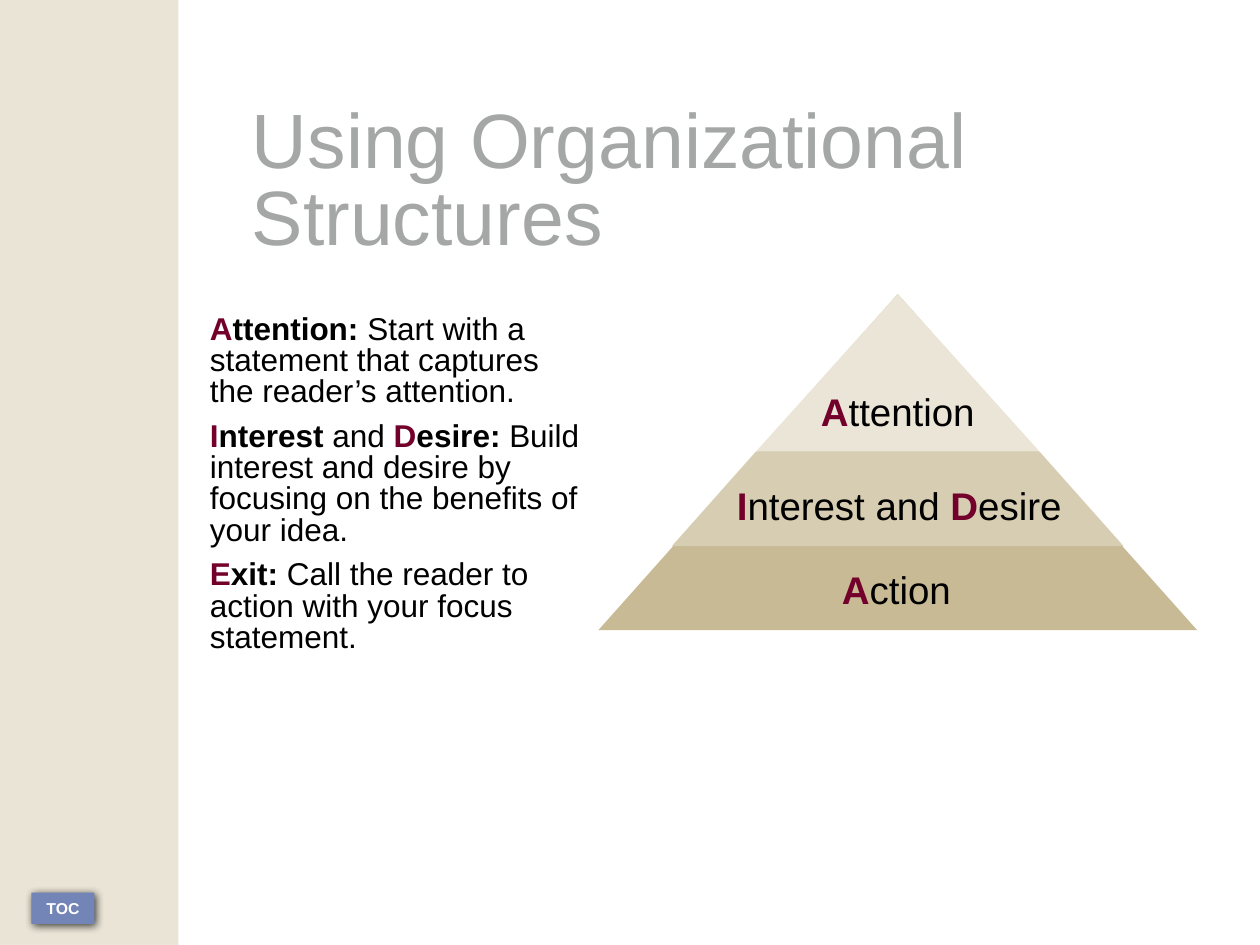
from lxml.etree import SubElement
from pptx import Presentation
from pptx.dml.color import RGBColor
from pptx.enum.shapes import MSO_SHAPE as Kind
from pptx.enum.text import MSO_ANCHOR as Anchor, PP_ALIGN as Align
from pptx.oxml.ns import qn
from pptx.util import Pt

WHITE = RGBColor(0xFF, 0xFF, 0xFF)
BLACK = RGBColor(0x00, 0x00, 0x00)
GRAY = RGBColor(0xA4, 0xA7, 0xA6)
WINE = RGBColor(0x72, 0x00, 0x2B)
BLUE = RGBColor(0x73, 0x84, 0xB6)
CREAM = RGBColor(0xE9, 0xE4, 0xD5)
LIGHT = RGBColor(0xEA, 0xE5, 0xD6)
SAND = RGBColor(0xD6, 0xCD, 0xB2)
TAN = RGBColor(0xC7, 0xBA, 0x95)

deck = Presentation()
deck.slide_width, deck.slide_height = Pt(720), Pt(540)
slide = deck.slides.add_slide(deck.slide_layouts[6])
shapes = slide.shapes


def paint(shape, color):
    shape.shadow.inherit = False
    shape.fill.solid()
    shape.fill.fore_color.rgb = color
    shape.line.fill.background()


def write(para, size, runs):
    for text, color, bold in runs:
        run = para.add_run()
        run.text = text
        font = run.font
        font.name, font.size, font.bold = "Arial", Pt(size), bold
        font.color.rgb = color


# Side band
band = shapes.add_shape(Kind.RECTANGLE, 0, 0, Pt(102), Pt(540))
paint(band, CREAM)

# Contents button with a soft shadow
button = shapes.add_shape(Kind.RECTANGLE, Pt(18), Pt(510), Pt(36), Pt(18))
paint(button, BLUE)
effects = button._element.spPr.find(qn("a:effectLst"))
shade = SubElement(effects, qn("a:outerShdw"), blurRad=str(Pt(5)),
                   dist=str(Pt(1.4)), dir="2700000", rotWithShape="0")
tint = SubElement(shade, qn("a:srgbClr"), val="000000")
SubElement(tint, qn("a:alpha"), val="75000")
frame = button.text_frame
frame.word_wrap = False
frame.vertical_anchor = Anchor.MIDDLE
frame.paragraphs[0].alignment = Align.CENTER
write(frame.paragraphs[0], 9, [("TOC", WHITE, True)])

# Title and body text
title = [[("Using Organizational Structures", GRAY, False)]]
body = [
    [("A", WINE, True), ("ttention: ", BLACK, True),
     ("Start with a statement that captures the reader’s attention.",
      BLACK, False)],
    [("I", WINE, True), ("nterest", BLACK, True), (" and ", BLACK, False),
     ("D", WINE, True), ("esire:", BLACK, True),
     (" Build interest and desire by focusing on the benefits of your idea.",
      BLACK, False)],
    [("E", WINE, True), ("xit:", BLACK, True),
     (" Call the reader to action with your focus statement.",
      BLACK, False)],
]
for left, top, width, height, size, anchor, paras in [
    (144, 60, 546, 90, 44, Anchor.MIDDLE, title),
    (120, 180, 216, 210, 18, Anchor.TOP, body),
]:
    box = shapes.add_textbox(Pt(left), Pt(top), Pt(width), Pt(height))
    frame = box.text_frame
    frame.word_wrap = True
    frame.vertical_anchor = anchor
    frame.margin_left = frame.margin_right = 0
    frame.margin_top = frame.margin_bottom = 0
    for i, runs in enumerate(paras):
        para = frame.add_paragraph() if i else frame.paragraphs[0]
        para.line_spacing = 0.83
        if i:
            para.space_before = Pt(7.5)
        write(para, size, runs)

# Pyramid: base, tip and middle layer
for left, width, height, color in [(342, 342, 192, TAN), (432, 162, 90, LIGHT)]:
    layer = shapes.add_shape(Kind.ISOSCELES_TRIANGLE, Pt(left), Pt(168),
                             Pt(width), Pt(height))
    paint(layer, color)
path = shapes.build_freeform(Pt(642), Pt(312))
path.add_line_segments([(Pt(594), Pt(258)), (Pt(432), Pt(258)),
                        (Pt(384), Pt(312))], close=True)
paint(path.convert_to_shape(), SAND)

# Layer labels
for left, top, width, runs in [
    (462, 216, 132, [("A", WINE, True), ("ttention", BLACK, False)]),
    (414, 270, 210, [("I", WINE, True), ("nterest and ", BLACK, False),
                     ("D", WINE, True), ("esire", BLACK, False)]),
    (474, 318, 132, [("A", WINE, True), ("ction", BLACK, False)]),
]:
    label = shapes.add_textbox(Pt(left), Pt(top), Pt(width), Pt(34))
    frame = label.text_frame
    frame.word_wrap = True
    frame.margin_top = Pt(5.5)
    write(frame.paragraphs[0], 22, runs)

deck.save("out.pptx")
